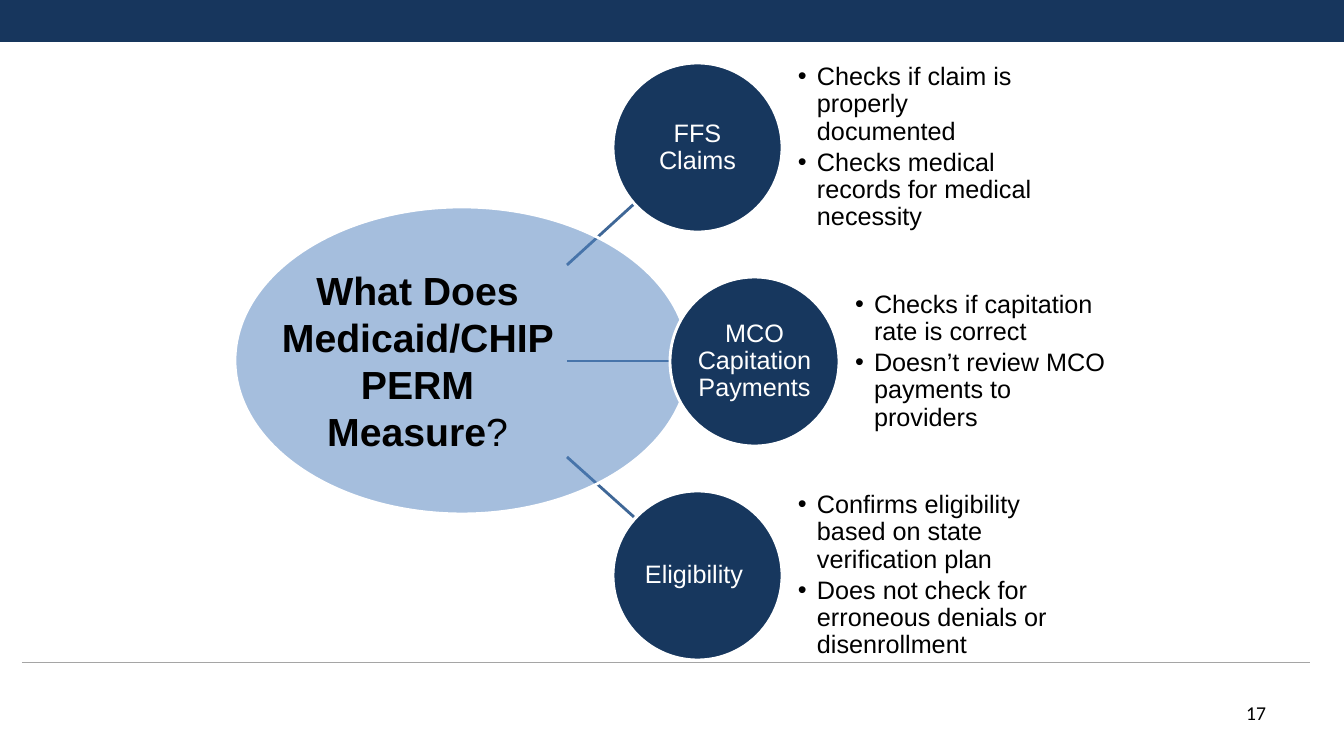
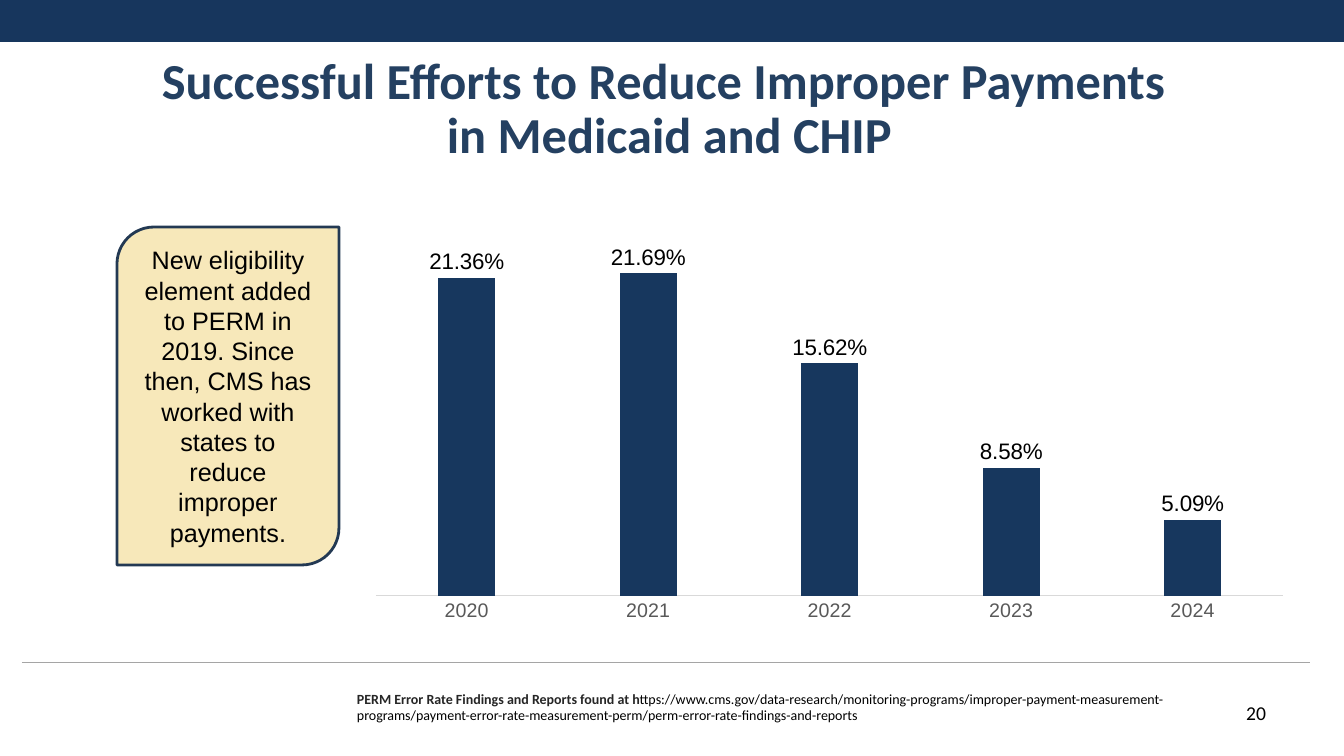
from dataclasses import dataclass

from lxml.etree import SubElement
from pptx import Presentation
from pptx.chart.data import CategoryChartData
from pptx.dml.color import RGBColor
from pptx.enum.chart import XL_CHART_TYPE, XL_LABEL_POSITION, XL_TICK_MARK
from pptx.enum.shapes import MSO_CONNECTOR, MSO_SHAPE
from pptx.enum.text import MSO_ANCHOR, PP_ALIGN
from pptx.oxml.ns import qn
from pptx.util import Pt

PX = 12192000 / 1344


def px(length):
    return round(length * PX)


def rgb(color):
    return RGBColor.from_string(color)


@dataclass(frozen=True)
class Theme:
    band: str = "17365D"
    navy: str = "17375E"
    title: str = "244061"
    hub: str = "4F81BD"
    spoke: str = "3F6797"
    gold: str = "E2AA00"
    note_edge: str = "233953"
    rule: str = "A5A5A5"
    axis: str = "D9D9D9"
    axis_text: str = "595959"
    source: str = "262626"
    black: str = "000000"
    white: str = "FFFFFF"
    body_font: str = "Arial"
    head_font: str = "Calibri"
    title_size: int = 36
    hub_size: int = 28
    body_size: int = 18
    label_size: int = 16
    small_size: int = 14
    source_size: int = 10


@dataclass(frozen=True)
class Run:
    text: str
    size: int
    color: str = Theme.black
    bold: bool = False
    font: str = Theme.body_font


class Deck:
    """Holds the theme and the current slide and draws each kind of element."""

    def __init__(self, theme):
        self.theme = theme
        self.presentation = Presentation()
        self.presentation.slide_width = px(1344)
        self.presentation.slide_height = px(756)
        self.slide = None

    def new_slide(self, number):
        theme = self.theme
        layout = self.presentation.slide_layouts[6]
        self.slide = self.presentation.slides.add_slide(layout)
        self.shape(MSO_SHAPE.RECTANGLE, (0, 0, 1344, 42), theme.band)
        self.line((22, 663), (1310, 663), theme.rule, 0.75)
        page = Run(number, theme.small_size, font=theme.head_font)
        self.text((1145, 696, 131, 40), [[page]], PP_ALIGN.RIGHT)

    def title(self, words):
        theme = self.theme
        heading = Run(words, theme.title_size, theme.title, True, theme.head_font)
        self.text((4, 50, 1331, 120), [[heading]], PP_ALIGN.CENTER,
                  MSO_ANCHOR.MIDDLE, spacing=0.9)

    def shape(self, preset, box, fill, edge=None, opacity=100):
        shape = self.slide.shapes.add_shape(preset, *map(px, box))
        shape.shadow.inherit = False
        shape.fill.solid()
        shape.fill.fore_color.rgb = rgb(fill)
        if opacity < 100:
            color = shape._element.spPr.find(f"{qn('a:solidFill')}/{qn('a:srgbClr')}")
            SubElement(color, qn("a:alpha"), val=str(opacity * 1000))
        if edge:
            shape.line.color.rgb = rgb(edge)
            shape.line.width = Pt(2)
        else:
            shape.line.fill.background()
        return shape

    def line(self, start, end, color, width):
        connector = self.slide.shapes.add_connector(
            MSO_CONNECTOR.STRAIGHT, *map(px, start + end))
        connector.line.color.rgb = rgb(color)
        connector.line.width = Pt(width)
        SubElement(connector._element.spPr, qn("a:effectLst"))

    def text(self, box, paragraphs, *style, **options):
        holder = self.slide.shapes.add_textbox(*map(px, box))
        self.set_text(holder, paragraphs, *style, **options)

    def set_text(self, holder, paragraphs, align=PP_ALIGN.LEFT, anchor=MSO_ANCHOR.TOP,
                 margins=(10, 5), spacing=None, bullets=False):
        frame = holder.text_frame
        frame.word_wrap = True
        frame.vertical_anchor = anchor
        frame.margin_left = frame.margin_right = px(margins[0])
        frame.margin_top = frame.margin_bottom = px(margins[1])
        for index, runs in enumerate(paragraphs):
            paragraph = frame.add_paragraph() if index else frame.paragraphs[0]
            paragraph.alignment = align
            if spacing:
                paragraph.line_spacing = spacing
            if index:
                paragraph.space_before = Pt(2.7)
            if bullets:
                self.bullet(paragraph)
            for run in runs:
                self.add_run(paragraph, run)

    def bullet(self, paragraph):
        properties = paragraph._p.get_or_add_pPr()
        properties.set("marL", str(px(19)))
        properties.set("indent", str(px(-19)))
        color = SubElement(properties, qn("a:buClr"))
        SubElement(color, qn("a:srgbClr"), val=self.theme.black)
        SubElement(properties, qn("a:buFont"), typeface=self.theme.body_font)
        SubElement(properties, qn("a:buChar"), char="•")

    def style_font(self, font, size, color, name):
        font.size = Pt(size)
        font.color.rgb = rgb(color)
        font.name = name

    def add_run(self, paragraph, run):
        for index, words in enumerate(run.text.split("\n")):
            if index:
                paragraph.add_line_break()
            piece = paragraph.add_run()
            piece.text = words
            self.style_font(piece.font, run.size, run.color, run.font)
            piece.font.bold = run.bold

    def column_chart(self, box, rates, plot, top):
        theme = self.theme
        data = CategoryChartData(number_format="0.00%")
        data.categories = list(rates)
        data.add_series("Series 1", list(rates.values()))
        chart = self.slide.shapes.add_chart(
            XL_CHART_TYPE.COLUMN_CLUSTERED, *map(px, box), data).chart
        chart.has_legend = False
        chart.has_title = False
        self.style_font(chart.font, theme.source_size, theme.black, theme.body_font)

        years = chart.category_axis
        years.major_tick_mark = years.minor_tick_mark = XL_TICK_MARK.NONE
        years.format.line.color.rgb = rgb(theme.axis)
        years.format.line.width = Pt(0.75)
        self.style_font(years.tick_labels.font, theme.small_size,
                        theme.axis_text, theme.body_font)
        scale = chart.value_axis
        scale.minimum_scale, scale.maximum_scale = 0, top
        scale.has_major_gridlines = False
        scale.visible = False

        columns = chart.plots[0]
        columns.gap_width, columns.overlap = 219, -27
        columns.vary_by_categories = False
        series = columns.series[0]
        series.invert_if_negative = False
        series.format.fill.solid()
        series.format.fill.fore_color.rgb = rgb(theme.navy)
        labels = series.data_labels
        labels.show_value = True
        labels.number_format = "0.00%"
        labels.number_format_is_linked = False
        labels.position = XL_LABEL_POSITION.OUTSIDE_END
        self.style_font(labels.font, theme.label_size, theme.black, theme.body_font)
        self.place_plot(chart, plot)

    def place_plot(self, chart, plot):
        area = chart._chartSpace.chart.plotArea
        layout = area.find(qn("c:layout"))
        if layout is None:
            layout = area.makeelement(qn("c:layout"))
            area.insert(0, layout)
        manual = SubElement(layout, qn("c:manualLayout"))
        settings = {"layoutTarget": "inner", "xMode": "edge", "yMode": "edge"}
        settings.update(zip("xywh", plot))
        for name, value in settings.items():
            SubElement(manual, qn(f"c:{name}"), val=str(value))


def perm_measures(deck):
    theme = deck.theme
    deck.new_slide("17")
    for start, end in [((567, 457), (634, 517)), ((567, 361), (669, 361)),
                       ((567, 265), (634, 204))]:
        deck.line(start, end, theme.spoke, 2)
    deck.shape(MSO_SHAPE.OVAL, (235, 207, 454, 307), theme.hub, theme.white, 51)
    measures = [
        (613, "FFS Claims", ["Checks if claim is properly documented",
                             "Checks medical records for medical necessity"]),
        (670, "MCO Capitation Payments", ["Checks if capitation rate is correct",
                                          "Doesn’t review MCO payments to providers"]),
        (613, "Eligibility ", ["Confirms eligibility based on state verification plan",
                               "Does not check for erroneous denials or disenrollment"]),
    ]
    for row, (left, measure, checks) in enumerate(measures):
        top = 63 + 214 * row
        circle = deck.shape(MSO_SHAPE.OVAL, (left, top, 169, 169),
                            theme.navy, theme.white)
        deck.set_text(circle, [[Run(measure, theme.body_size, theme.white)]],
                      PP_ALIGN.CENTER, MSO_ANCHOR.MIDDLE, (1, 1), 0.9)
        deck.text((left + 185, top, 253, 169),
                  [[Run(check, theme.body_size)] for check in checks],
                  PP_ALIGN.LEFT, MSO_ANCHOR.MIDDLE, (0, 0), 0.9, bullets=True)
    question = [Run("What Does Medicaid/CHIP PERM Measure", theme.hub_size, bold=True),
                Run("?", theme.hub_size)]
    deck.text((270, 261, 295, 201), [question], PP_ALIGN.CENTER)


def error_rates(deck):
    theme = deck.theme
    deck.new_slide("20")
    deck.title("Successful Efforts to Reduce Improper Payments \nin Medicaid and CHIP")
    rates = {"2020": 0.2136, "2021": 0.2169, "2022": 0.1562,
             "2023": 0.0858, "2024": 0.0509}
    deck.column_chart((345, 224, 939, 430), rates, (0.033, 0, 0.967, 0.865), 0.25)
    note = deck.shape(MSO_SHAPE.ROUND_2_DIAG_RECTANGLE, (117, 227, 222, 338),
                      theme.gold, theme.note_edge, 27)
    reason = ("New eligibility element added to PERM in 2019. Since then, "
              "CMS has worked with states to reduce improper payments.")
    deck.set_text(note, [[Run(reason, theme.body_size)]],
                  PP_ALIGN.CENTER, MSO_ANCHOR.MIDDLE, (11, 5))
    address = ("ttps://www.cms.gov/data-research/monitoring-programs/"
               "improper-payment-measurement-programs/"
               "payment-error-rate-measurement-perm/"
               "perm-error-rate-findings-and-reports")
    source = [Run("PERM Error Rate Findings and Reports found at h",
                  theme.source_size, theme.source, True, theme.head_font),
              Run(address, theme.source_size, font=theme.head_font)]
    deck.text((347, 685, 833, 56), [source])


def main():
    deck = Deck(Theme())
    perm_measures(deck)
    error_rates(deck)
    deck.presentation.save("out.pptx")


if __name__ == "__main__":
    main()
